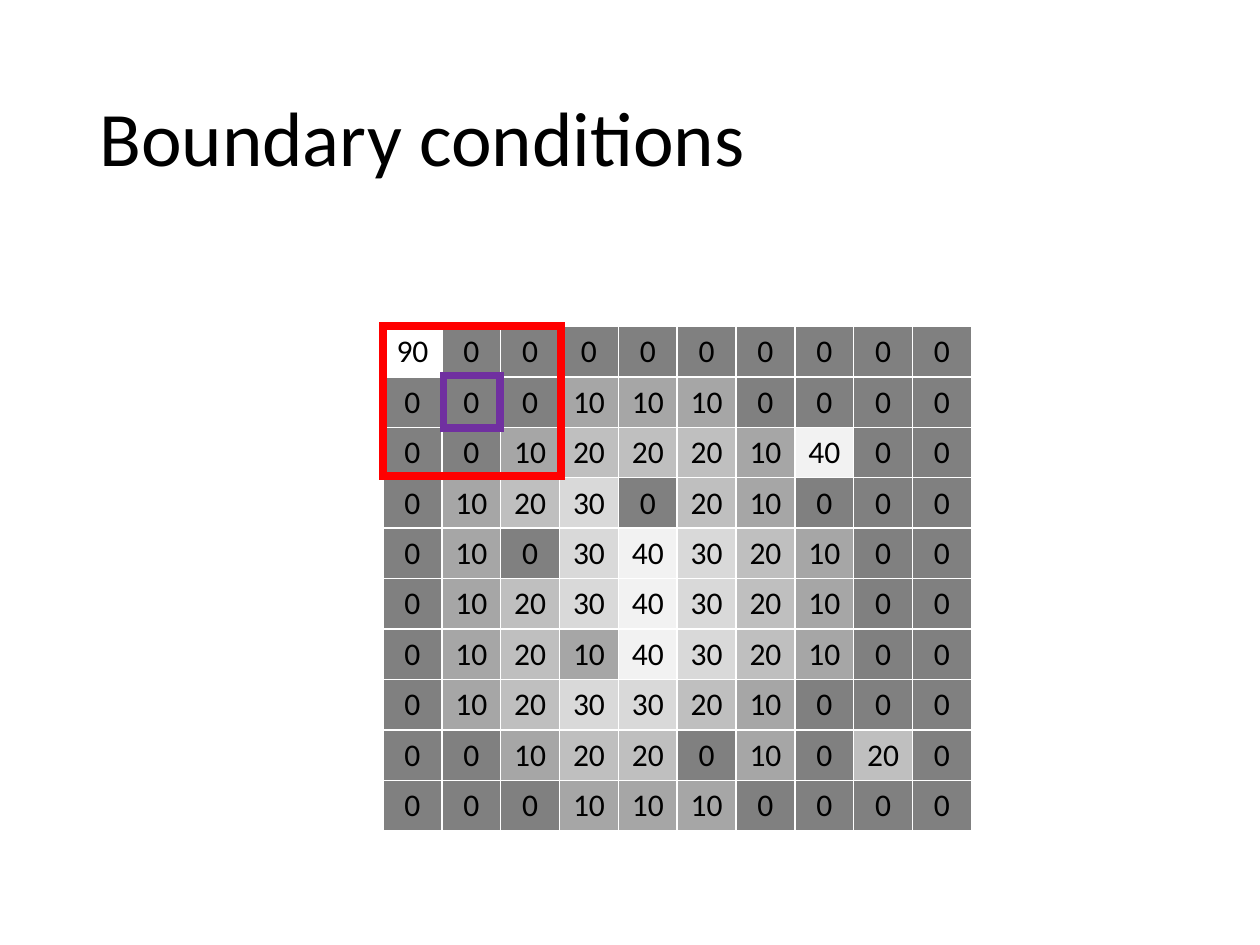
from lxml import etree
from pptx import Presentation
from pptx import util as u
from pptx.dml.color import RGBColor
from pptx.enum import shapes, text
from pptx.oxml.ns import qn

TITLE = "Boundary conditions"
PIXELS = [
    [90, 0, 0, 0, 0, 0, 0, 0, 0, 0],
    [0, 0, 0, 10, 10, 10, 0, 0, 0, 0],
    [0, 0, 10, 20, 20, 20, 10, 40, 0, 0],
    [0, 10, 20, 30, 0, 20, 10, 0, 0, 0],
    [0, 10, 0, 30, 40, 30, 20, 10, 0, 0],
    [0, 10, 20, 30, 40, 30, 20, 10, 0, 0],
    [0, 10, 20, 10, 40, 30, 20, 10, 0, 0],
    [0, 10, 20, 30, 30, 20, 10, 0, 0, 0],
    [0, 0, 10, 20, 20, 0, 10, 0, 20, 0],
    [0, 0, 0, 10, 10, 10, 0, 0, 0, 0],
]
COLORS = {"text": "000000", "border": "FFFFFF", "center": "7030A0", "window": "FF0000"}
SHADES = {0: "808080", 10: "A6A6A6", 20: "BFBFBF", 30: "D9D9D9", 40: "F2F2F2", 90: "FFFFFF"}
TITLE_BOX = (0.69, 0.4, 8.62, 1.45)
GRID_BOX = (3.04, 2.59, 4.67, 4)
ROW_HEIGHT = 0.38
OUTLINES = [("center", (3.52, 2.98, 0.45, 0.42)), ("window", (3.04, 2.59, 1.41, 1.19))]


def inches(box):
    return [u.Inches(length) for length in box]


def write(paragraph, words, size, **formats):
    paragraph.text = words
    for name, value in formats.items():
        setattr(paragraph, name, value)
    font = paragraph.runs[0].font
    for name, value in {"name": "Calibri", "size": u.Pt(size)}.items():
        setattr(font, name, value)
    font.color.rgb = RGBColor.from_string(COLORS["text"])


def add_borders(cell):
    properties = cell._tc.get_or_add_tcPr()
    for position, side in enumerate(("lnL", "lnR", "lnT", "lnB")):
        line = etree.Element(qn(f"a:{side}"), w=str(u.Pt(1)))
        fill = etree.SubElement(line, qn("a:solidFill"))
        etree.SubElement(fill, qn("a:srgbClr"), val=COLORS["border"])
        properties.insert(position, line)


def add_title(slide):
    frame = slide.shapes.add_textbox(*inches(TITLE_BOX)).text_frame
    frame.word_wrap = True
    frame.vertical_anchor = text.MSO_ANCHOR.MIDDLE
    write(frame.paragraphs[0], TITLE, 44, line_spacing=0.9)


def add_grid(slide):
    graphic = slide.shapes.add_table(len(PIXELS), len(PIXELS[0]), *inches(GRID_BOX))
    table = graphic.table
    table.first_row = table.horz_banding = False
    for row, values in zip(table.rows, PIXELS):
        row.height = u.Inches(ROW_HEIGHT)
        for cell, value in zip(row.cells, values):
            cell.fill.solid()
            cell.fill.fore_color.rgb = RGBColor.from_string(SHADES[value])
            add_borders(cell)
            write(cell.text_frame.paragraphs[0], str(value), 18, alignment=text.PP_ALIGN.CENTER)
    graphic.height = u.Inches(GRID_BOX[3])


def add_outline(slide, color, box):
    shape = slide.shapes.add_shape(shapes.MSO_SHAPE.RECTANGLE, *inches(box))
    shape.shadow.inherit = False
    shape.fill.background()
    shape.line.color.rgb = RGBColor.from_string(COLORS[color])
    shape.line.width = u.Pt(4.5)
    etree.SubElement(shape.line._get_or_add_ln(), qn("a:miter"), lim="800000")


def main():
    presentation = Presentation()
    presentation.slide_width = u.Inches(10)
    presentation.slide_height = u.Inches(7.5)
    slide = presentation.slides.add_slide(presentation.slide_layouts[6])
    add_title(slide)
    add_grid(slide)
    for color, box in OUTLINES:
        add_outline(slide, color, box)
    presentation.save("out.pptx")


if __name__ == "__main__":
    main()
